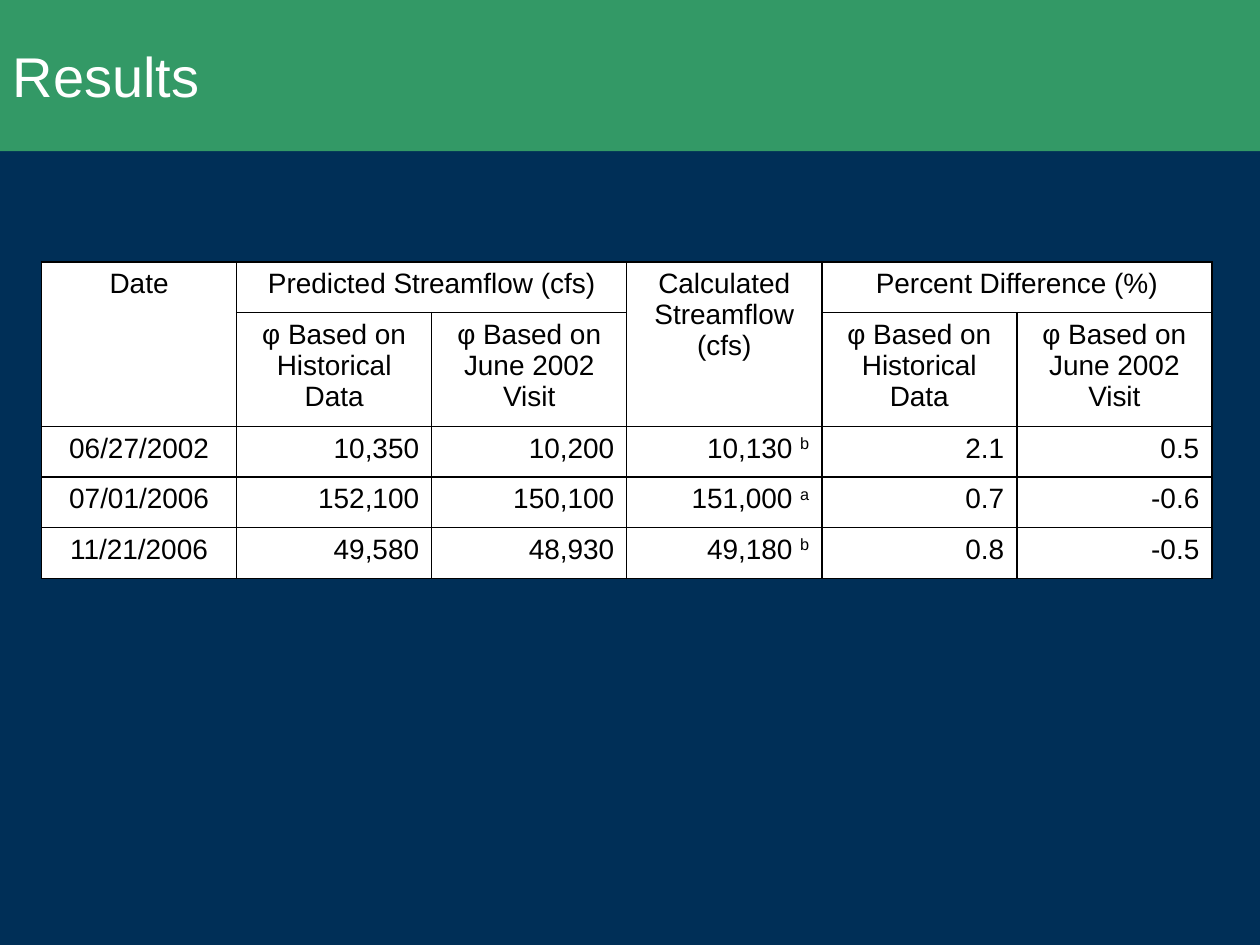
import dataclasses

import lxml.etree
import pptx
import pptx.dml.color
import pptx.enum.text
import pptx.oxml.ns
import pptx.util

Inches = pptx.util.Inches
ALIGN = pptx.enum.text.PP_ALIGN


@dataclasses.dataclass(frozen=True)
class Theme:
    background: str = "002F57"
    band: str = "339966"
    light: str = "FFFFFF"
    ink: str = "000000"
    font: str = "Arial"
    title_size: int = 32
    table_size: int = 16
    border_width: int = 1


THEME = Theme()

BASES = ["φ Based on Historical Data", "φ Based on June 2002 Visit"]
HEADINGS = [
    ["Date", "Predicted Streamflow (cfs)", "", "Calculated Streamflow (cfs)",
     "Percent Difference (%)", ""],
    ["", *BASES, "", *BASES],
]
# A caret separates a value from its superscript footnote mark
MEASUREMENTS = [
    ["06/27/2002", "10,350", "10,200", "10,130 ^b", "2.1", "0.5"],
    ["07/01/2006", "152,100", "150,100", "151,000 ^a", "0.7", "-0.6"],
    ["11/21/2006", "49,580", "48,930", "49,180 ^b", "0.8", "-0.5"],
]
# First and last cell of each merged heading, as (row, column)
HEADING_SPANS = [((0, 0), (1, 0)), ((0, 1), (0, 2)), ((0, 3), (1, 3)), ((0, 4), (0, 5))]
ROW_SHARES = [0.4, 0.9, 0.4, 0.4, 0.4]


def paint(fill, color):
    fill.solid()
    fill.fore_color.rgb = pptx.dml.color.RGBColor.from_string(color)


def style_paragraph(paragraph, size, color, alignment):
    paragraph.alignment = alignment
    paragraph.font.name = THEME.font
    paragraph.font.size = pptx.util.Pt(size)
    paragraph.font.color.rgb = pptx.dml.color.RGBColor.from_string(color)


def add_borders(cell):
    properties = cell._tc.get_or_add_tcPr()
    width = str(pptx.util.Pt(THEME.border_width))
    for position, side in enumerate(("lnL", "lnR", "lnT", "lnB")):
        line = lxml.etree.Element(pptx.oxml.ns.qn(f"a:{side}"), w=width)
        fill = lxml.etree.SubElement(line, pptx.oxml.ns.qn("a:solidFill"))
        lxml.etree.SubElement(fill, pptx.oxml.ns.qn("a:srgbClr"), val=THEME.ink)
        properties.insert(position, line)


def fill_cell(cell, text, alignment):
    paint(cell.fill, THEME.light)
    add_borders(cell)
    paragraph = cell.text_frame.paragraphs[0]
    value, _, mark = text.partition("^")
    if value:
        paragraph.add_run().text = value
    if mark:
        footnote = paragraph.add_run()
        footnote.text = mark
        footnote.font._element.set("baseline", "30000")
    style_paragraph(paragraph, THEME.table_size, THEME.ink, alignment)


def place_title(slide, left, top, width, height):
    title = slide.shapes.title
    title.left, title.top, title.width, title.height = left, top, width, height
    paint(title.fill, THEME.band)
    frame = title.text_frame
    frame.text = "Results"
    frame.word_wrap = True
    frame.auto_size = pptx.enum.text.MSO_AUTO_SIZE.NONE
    frame.vertical_anchor = pptx.enum.text.MSO_ANCHOR.MIDDLE
    frame.margin_left = frame.margin_right = Inches(0.1)
    frame.margin_top = frame.margin_bottom = Inches(0.05)
    style_paragraph(frame.paragraphs[0], THEME.title_size, THEME.light, ALIGN.LEFT)


def place_streamflow_table(slide, left, top, width, height):
    rows = HEADINGS + MEASUREMENTS
    column_count = len(rows[0])
    table = slide.shapes.add_table(
        len(rows), column_count, left, top, width, height).table
    table.first_row = table.horz_banding = False

    # Equal columns; rows share the height
    for column in table.columns:
        column.width = round(width / column_count)
    for row, share in zip(table.rows, ROW_SHARES):
        row.height = round(height * share / sum(ROW_SHARES))

    # Headings and dates are centred, values align right
    for r, texts in enumerate(rows):
        for c, text in enumerate(texts):
            centred = r < len(HEADINGS) or c == 0
            fill_cell(table.cell(r, c), text, ALIGN.CENTER if centred else ALIGN.RIGHT)

    for first, last in HEADING_SPANS:
        table.cell(*first).merge(table.cell(*last))


def main():
    presentation = pptx.Presentation()
    presentation.slide_width = Inches(10)
    presentation.slide_height = Inches(7.5)
    slide = presentation.slides.add_slide(presentation.slide_layouts[5])
    paint(slide.background.fill, THEME.background)

    place_title(slide, 0, 0, presentation.slide_width, Inches(1.2))
    place_streamflow_table(slide, Inches(0.33), Inches(2.08), Inches(9.29), Inches(2.51))
    presentation.save("out.pptx")


if __name__ == "__main__":
    main()
